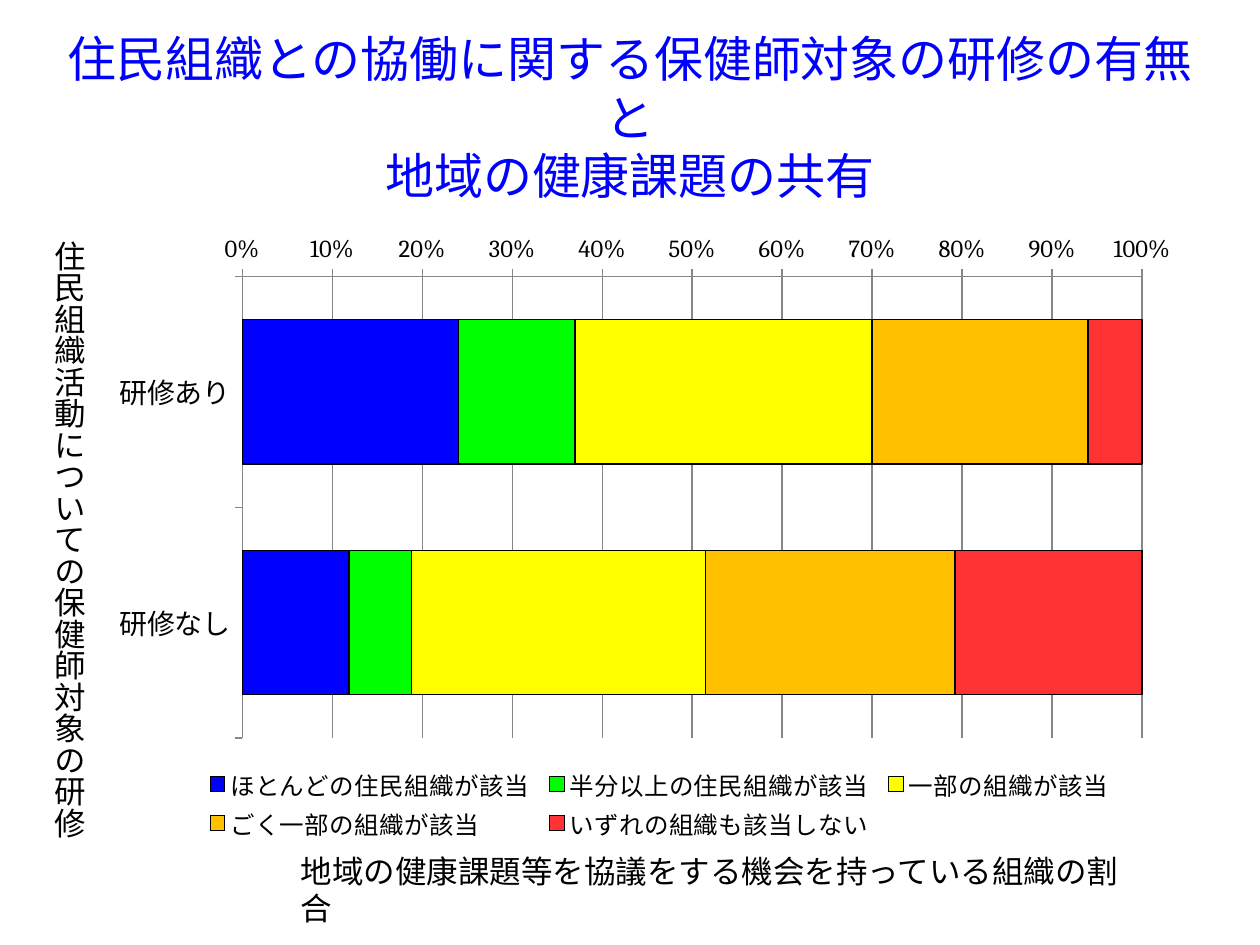
from lxml import etree
from pptx import Presentation
from pptx.chart import data
from pptx.dml import color
from pptx.enum import chart as chart_enum, text
from pptx.oxml import ns
from pptx.util import Inches, Pt

THEME = {
    "font": "Calibri",
    "number_font": "Cambria",
    "ink": color.RGBColor.from_string("000000"),
    "title": color.RGBColor.from_string("0000FF"),
    "rule": color.RGBColor.from_string("878787"),
    "series": ["0000FF", "00FF00", "FFFF00", "FFC000", "FF3333"],
    "title_size": 28,
    "label_size": 18,
    "category_size": 16,
    "scale_size": 14,
    "base_size": 12,
}

presentation = Presentation()
presentation.slide_width, presentation.slide_height = Inches(10), Inches(7.5)
column = presentation.slide_width / 100
row = presentation.slide_height / 100
slide = presentation.slides.add_slide(presentation.slide_layouts[6])


def style_font(font, size, ink=THEME["ink"], name=THEME["font"]):
    for key, value in {"size": Pt(size), "name": name, "bold": False}.items():
        setattr(font, key, value)
    font.color.rgb = ink


def place_layout(parent, index, shares, inner=False):
    for old in parent.findall(ns.qn("c:layout")):
        parent.remove(old)
    layout = etree.Element(ns.qn("c:layout"))
    manual = etree.SubElement(layout, ns.qn("c:manualLayout"))
    settings = {"layoutTarget": "inner"} if inner else {}
    settings |= {"xMode": "edge", "yMode": "edge"}
    settings |= dict(zip("xywh", shares))
    for key, value in settings.items():
        etree.SubElement(manual, ns.qn(f"c:{key}")).set("val", str(value))
    parent.insert(index, layout)


chart_data = data.CategoryChartData(number_format="#,##0")
chart_data.categories = ["研修あり", "研修なし"]
for name, values in {
    "ほとんどの住民組織が該当": (24, 12),
    "半分以上の住民組織が該当": (13, 7),
    "一部の組織が該当": (33, 33),
    "ごく一部の組織が該当": (24, 28),
    "いずれの組織も該当しない": (6, 21),
}.items():
    chart_data.add_series(name, values)

chart = slide.shapes.add_chart(
    chart_enum.XL_CHART_TYPE.BAR_STACKED_100,
    *map(int, (7.9 * column, 23.33 * row, 87.1 * column, 66 * row)),
    chart_data,
).chart
style_font(chart.font, THEME["base_size"])
chart.has_title = False
chart.has_legend = True

plot = chart.plots[0]
for key, value in {"gap_width": 60, "overlap": 100, "vary_by_categories": False}.items():
    setattr(plot, key, value)
for series, fill in zip(plot.series, THEME["series"]):
    series.format.fill.solid()
    series.format.fill.fore_color.rgb = color.RGBColor.from_string(fill)
    series.format.line.color.rgb = THEME["ink"]
    series.format.line.width = Pt(0.75)

category_axis, value_axis = chart.category_axis, chart.value_axis
category_axis.reverse_order = True
value_axis.has_major_gridlines = True
value_axis.tick_labels.number_format = "0%"
value_axis.tick_labels.number_format_is_linked = False
for axis, size, name in (
    (category_axis, THEME["category_size"], THEME["font"]),
    (value_axis, THEME["scale_size"], THEME["number_font"]),
):
    axis.major_tick_mark = chart_enum.XL_TICK_MARK.OUTSIDE
    axis.minor_tick_mark = chart_enum.XL_TICK_MARK.NONE
    axis.format.line.color.rgb = THEME["rule"]
    style_font(axis.tick_labels.font, size, name=name)
value_axis.major_gridlines.format.line.color.rgb = THEME["rule"]

legend = chart.legend
legend.position = chart_enum.XL_LEGEND_POSITION.BOTTOM
legend.include_in_layout = False
style_font(legend.font, THEME["scale_size"])
place_layout(chart._chartSpace.chart.plotArea, 0, (0.13, 0.09, 0.82, 0.74), inner=True)
place_layout(legend._element, 1, (0.09, 0.87, 0.84, 0.13))

grow = text.MSO_AUTO_SIZE.SHAPE_TO_FIT_TEXT
for wording, area, size, ink, alignment, direction, frame_format in (
    (
        "住民組織との協働に関する保健師対象の研修の有無と\v地域の健康課題の共有",
        (3.3, 4, 93.4, 16.67), THEME["title_size"], THEME["title"],
        text.PP_ALIGN.CENTER, "horz",
        {"word_wrap": True, "vertical_anchor": text.MSO_ANCHOR.MIDDLE},
    ),
    (
        "地域の健康課題等を協議をする機会を持っている組織の割合",
        (22.9, 89.47, 67.8, 5.33), THEME["label_size"], THEME["ink"],
        text.PP_ALIGN.LEFT, "horz", {"word_wrap": True, "auto_size": grow},
    ),
    (
        "住民組織活動についての保健師対象の研修",
        (2.5, 24.13, 5, 62.4), THEME["label_size"], THEME["ink"],
        text.PP_ALIGN.LEFT, "eaVert", {"word_wrap": False, "auto_size": grow},
    ),
):
    left, top, width, height = area
    frame = slide.shapes.add_textbox(
        *map(int, (left * column, top * row, width * column, height * row))
    ).text_frame
    for key, value in frame_format.items():
        setattr(frame, key, value)
    frame._txBody.bodyPr.set("vert", direction)
    paragraph = frame.paragraphs[0]
    paragraph.text = wording
    paragraph.alignment = alignment
    for run in paragraph.runs:
        style_font(run.font, size, ink)

presentation.save("out.pptx")
